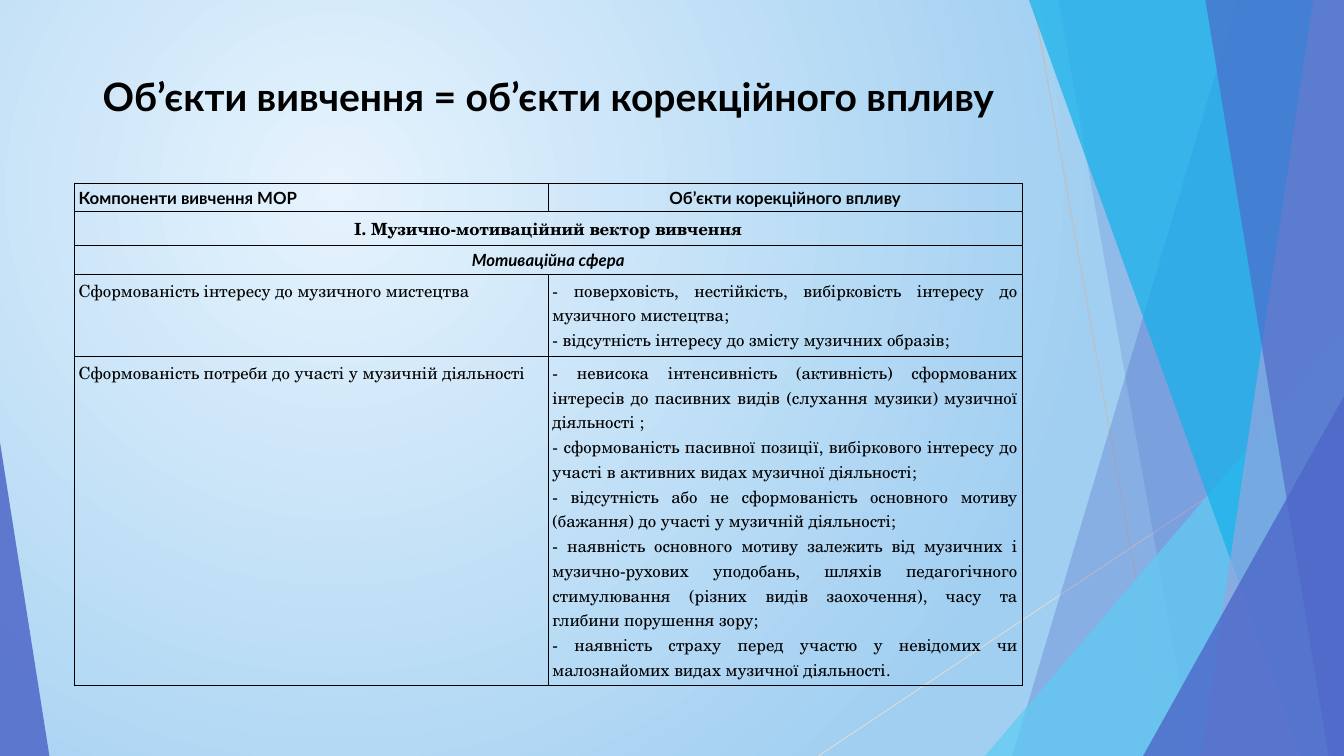
import pptx
import pptx.util
import pptx.dml.color
import pptx.enum.shapes
import pptx.enum.text
import pptx.oxml
import pptx.oxml.ns

Pt = pptx.util.Pt
RGB = pptx.dml.color.RGBColor.from_string
qn = pptx.oxml.ns.qn
ALIGN = pptx.enum.text.PP_ALIGN
NS = pptx.oxml.ns.nsdecls("a")

COLORS = {
    "text": "000000", "bg_center": "E6F3FD", "bg_edge": "A1CFF1",
    "indigo": "4E67C8", "lavender": "95A4DE", "cyan": "12B2EB", "sky": "5ECCF3",
    "line": "BFBFBF", "line_light": "D9D9D9",
}
SANS, SERIF = "Lato", "TeX Gyre Schola"
W, H = 960, 540


def paint(sp, color, opacity):
    sp.shadow.inherit = False
    sp.line.fill.background()
    sp.fill.solid()
    sp.fill.fore_color.rgb = RGB(COLORS[color])
    clr = sp.fill._xPr.find(qn("a:solidFill"))[0]
    clr.append(pptx.oxml.parse_xml(f'<a:alpha {NS} val="{opacity * 1000}"/>'))


def style(p, size, font, align, bold=False, italic=False):
    p.alignment = align
    for r in p.runs:
        r.font.size = Pt(size)
        r.font.name = font
        r.font.bold = bold
        r.font.italic = italic
        r.font.color.rgb = RGB(COLORS["text"])


prs = pptx.Presentation()
prs.slide_width, prs.slide_height = Pt(W), Pt(H)
s = prs.slides.add_slide(prs.slide_layouts[5])

# Background: radial gradient
fill = s.background.fill
fill.gradient()
for stop, name, pos in zip(fill.gradient_stops, ("bg_center", "bg_edge"), (0, 1)):
    stop.color.rgb = RGB(COLORS[name])
    stop.position = pos
grad = s.background._cSld.find(".//" + qn("a:gradFill"))
grad.remove(grad.find(qn("a:lin")))
grad.append(pptx.oxml.parse_xml(
    f'<a:path {NS} path="circle"><a:fillToRect l="50000" t="50000" r="100000" b="100000"/></a:path>'))

# Thin decorative lines
for x1, y1, x2, y2, color in [
    (738, 0, 834, H, "line"),
    (W, 290, 584.5, H, "line_light"),
]:
    line = s.shapes.add_connector(
        pptx.enum.shapes.MSO_CONNECTOR.STRAIGHT, Pt(x1), Pt(y1), Pt(x2), Pt(y2))
    line.line.color.rgb = RGB(COLORS[color])
    line.line.width = Pt(0.75)
    line.element.spPr.append(pptx.oxml.parse_xml(f"<a:effectLst {NS}/>"))

# Bands reach the right edge: top-left x, bottom-left x, colour, opacity
# Triangles: left, top, width, apex position, colour, opacity
for kind, *spec_values in [
    ("band", 884, 723, "indigo", 30),
    ("band", 756, 852, "indigo", 20),
    ("triangle", 703.5, 240, 256.5, 1, "sky", 72),
    ("band", 735, 929.5, "cyan", 70),
    ("band", 938, 858, "lavender", 70),
    ("band", 861, 949, "indigo", 65),
    ("triangle", 816.5, 283, 143.5, 1, "indigo", 80),
    ("triangle", 0, 316, 35.3, 0, "indigo", 85),
]:
    *geometry, color, opacity = spec_values
    if kind == "band":
        top_x, bottom_x = geometry
        fb = s.shapes.build_freeform(Pt(top_x), Pt(0))
        fb.add_line_segments([(Pt(W), Pt(0)), (Pt(W), Pt(H)), (Pt(bottom_x), Pt(H))])
        sp = fb.convert_to_shape()
    else:
        x, y, w, apex = geometry
        sp = s.shapes.add_shape(
            pptx.enum.shapes.MSO_SHAPE.ISOSCELES_TRIANGLE, Pt(x), Pt(y), Pt(w), Pt(H - y))
        sp.adjustments[0] = apex
    paint(sp, color, opacity)

# Title, brought in front of the decoration
title = s.shapes.title
title.element.getparent().append(title.element)
title.left, title.top, title.width, title.height = Pt(53.3), Pt(48.5), Pt(676.8), Pt(103.5)
tf = title.text_frame
tf.text = "Об’єкти вивчення = об’єкти корекційного впливу"
tf.word_wrap = True
tf.vertical_anchor = pptx.enum.text.MSO_ANCHOR.TOP
style(tf.paragraphs[0], 27.9, SANS, ALIGN.CENTER, bold=True)

# Table: each row holds cell texts, font, alignments, bold, italic and height
rows = [
    (["Компоненти вивчення МОР", "Об’єкти корекційного впливу"],
     SANS, (ALIGN.LEFT, ALIGN.CENTER), True, False, 20.2),
    (["І. Музично-мотиваційний вектор вивчення"], SERIF, (ALIGN.CENTER,), True, False, 20.2),
    (["Мотиваційна сфера"], SANS, (ALIGN.CENTER,), True, True, 20.2),
    (["Сформованість інтересу до музичного мистецтва",
      "- поверховість, нестійкість, вибірковість інтересу до музичного мистецтва;\n"
      "- відсутність інтересу до змісту музичних образів;"],
     SERIF, (ALIGN.JUSTIFY,) * 2, False, False, 49),
    (["Сформованість потреби до участі у музичній діяльності",
      "- невисока інтенсивність (активність) сформованих інтересів до пасивних видів "
      "(слухання музики) музичної діяльності ;\n"
      "- сформованість пасивної позиції, вибіркового інтересу до участі в активних видах "
      "музичної діяльності;\n"
      "- відсутність або не сформованість основного мотиву (бажання) до участі у музичній "
      "діяльності;\n"
      "- наявність основного мотиву залежить від музичних і музично-рухових уподобань, "
      "шляхів педагогічного стимулювання (різних видів заохочення), часу та глибини "
      "порушення зору;\n"
      "- наявність страху перед участю у невідомих чи малознайомих видах музичної діяльності."],
     SERIF, (ALIGN.JUSTIFY,) * 2, False, False, 193),
]
table = s.shapes.add_table(len(rows), 2, Pt(53.3), Pt(131), Pt(676.8), Pt(302.6)).table
table.first_row = table.horz_banding = False
for i, (texts, font, aligns, bold, italic, height) in enumerate(rows):
    table.rows[i].height = Pt(height)
    if len(texts) == 1:
        table.cell(i, 0).merge(table.cell(i, 1))
    for j, (text, align) in enumerate(zip(texts, aligns)):
        tf = table.cell(i, j).text_frame
        tf.text = text
        for p in tf.paragraphs:
            style(p, 12, font, align, bold, italic)

# Clear cells with thin black borders
for cell in table.iter_cells():
    cell.margin_left = cell.margin_right = cell.margin_top = cell.margin_bottom = Pt(2.9)
    cell.fill.background()
    tcPr = cell._tc.get_or_add_tcPr()
    for k, side in enumerate("LRTB"):
        tcPr.insert(k, pptx.oxml.parse_xml(
            f'<a:ln{side} {NS} w="{Pt(0.75)}"><a:solidFill>'
            f'<a:srgbClr val="{COLORS["text"]}"/></a:solidFill></a:ln{side}>'))

prs.save("out.pptx")
